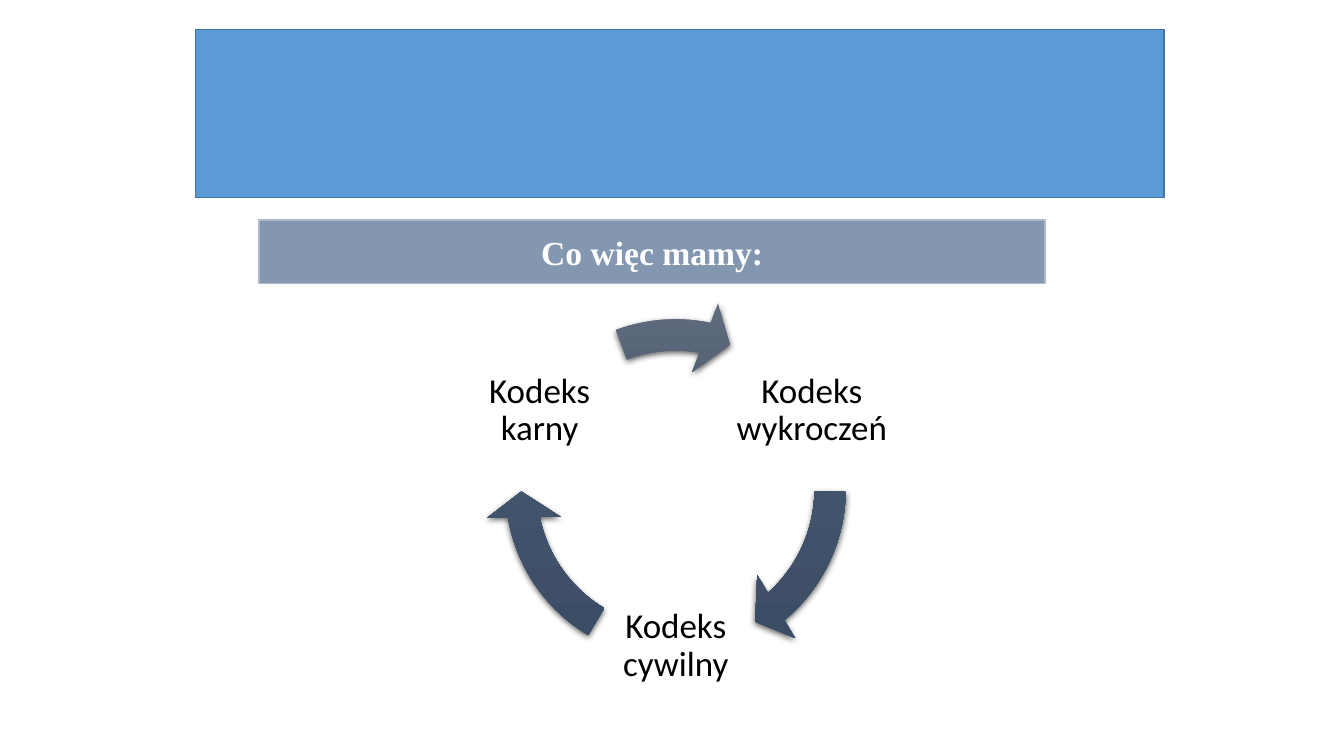
import math

from lxml import etree
from pptx import Presentation
from pptx import util as u
from pptx.dml.color import RGBColor
from pptx.enum import shapes, text
from pptx.oxml import parse_xml
from pptx.oxml.ns import nsdecls, qn

COLOURS = {
    "banner": "5B9BD5",
    "banner_edge": "43739E",
    "heading": "8497B0",
    "heading_edge": "ADB9CA",
    "heading_text": "FFFFFF",
    "label": "000000",
    "arrow_top": "606B7D",
    "arrow_middle": "42546C",
    "arrow_bottom": "394A62",
    "shadow": "000000",
}
CENTRE_X, CENTRE_Y = 17.03, 12.33
LABEL_RADIUS, LABEL_SIDE, ARROW_SIDE = 3.96, 4.06, 9.63
CYCLE = [
    ("Kodeks wykroczeń", -30, 29.652, 0.508),
    ("Kodeks cywilny", 90, 101.734, 72.59),
    ("Kodeks karny", 210, 168.58, 149.662),
]


def colour(name):
    return RGBColor.from_string(COLOURS[name])


def centred_box(x, y, side):
    return [u.Cm(value) for value in (x - side / 2, y - side / 2, side, side)]


def paint(panel, fill, edge):
    panel.fill.solid()
    panel.fill.fore_color.rgb = colour(fill)
    panel.line.color.rgb = colour(edge)
    panel.line.width = u.Pt(1)


def write(frame, words, font, size, ink, bold=False):
    frame.word_wrap = True
    frame.auto_size = text.MSO_AUTO_SIZE.NONE
    frame.vertical_anchor = text.MSO_ANCHOR.MIDDLE
    paragraph = frame.paragraphs[0]
    paragraph.alignment = text.PP_ALIGN.CENTER
    run = paragraph.add_run()
    run.text = words
    run.font.name = font
    run.font.size = u.Pt(size)
    run.font.bold = bold
    run.font.color.rgb = colour(ink)
    return paragraph


def add_banner(slide):
    banner = slide.shapes.add_shape(
        shapes.MSO_SHAPE.RECTANGLE, u.Cm(4.93), u.Cm(0.74), u.Cm(24.41), u.Cm(4.24))
    banner.shadow.inherit = False
    paint(banner, "banner", "banner_edge")


def add_heading(slide, words):
    heading = slide.shapes.title
    heading.left, heading.top = u.Cm(6.53), u.Cm(5.54)
    heading.width, heading.height = u.Cm(19.81), u.Cm(1.6)
    paint(heading, "heading", "heading_edge")
    write(heading.text_frame, words, "Times New Roman", 24, "heading_text", True)


def add_label(cycle, words, degrees):
    angle = math.radians(degrees)
    label = cycle.shapes.add_textbox(*centred_box(
        CENTRE_X + LABEL_RADIUS * math.cos(angle),
        CENTRE_Y + LABEL_RADIUS * math.sin(angle), LABEL_SIDE))
    frame = label.text_frame
    frame.margin_left = frame.margin_right = u.Cm(0.08)
    frame.margin_top = frame.margin_bottom = u.Cm(0.08)
    write(frame, words, "Calibri", 25, "label").line_spacing = 0.9


def shade(arrow):
    arrow.fill.gradient()
    arrow.fill.gradient_angle = 270
    stops = arrow.fill._fill._gradFill.find(qn("a:gsLst"))
    for stop in list(stops):
        stops.remove(stop)
    for position, name in ((0, "arrow_top"), (50000, "arrow_middle"), (100000, "arrow_bottom")):
        stop = etree.SubElement(stops, qn("a:gs"), pos=str(position))
        etree.SubElement(stop, qn("a:srgbClr"), val=COLOURS[name])


def cast_shadow(arrow):
    arrow.shadow.inherit = False
    effects = arrow._element.spPr.find(qn("a:effectLst"))
    effects.append(parse_xml(
        f'<a:outerShdw {nsdecls("a")} blurRad="{u.Pt(4.5)}" dist="{u.Pt(1.5)}" '
        f'dir="5400000" algn="ctr" rotWithShape="0">'
        f'<a:srgbClr val="{COLOURS["shadow"]}"><a:alpha val="63000"/></a:srgbClr>'
        f'</a:outerShdw>'))


def add_arrow(cycle, end, start):
    arrow = cycle.shapes.add_shape(
        shapes.MSO_SHAPE.CIRCULAR_ARROW, *centred_box(CENTRE_X, CENTRE_Y, ARROW_SIDE))
    for index, value in enumerate((0.082, 5.758, end, start, 0.096)):
        arrow.adjustments[index] = value
    arrow.line.fill.background()
    shade(arrow)
    cast_shadow(arrow)


def main():
    deck = Presentation()
    deck.slide_width, deck.slide_height = u.Cm(33.87), u.Cm(19.05)
    slide = deck.slides.add_slide(deck.slide_layouts.get_by_name("Title Only"))
    add_banner(slide)
    add_heading(slide, "Co więc mamy:")
    cycle = slide.shapes.add_group_shape()
    for words, degrees, end, start in CYCLE:
        add_label(cycle, words, degrees)
        add_arrow(cycle, end, start)
    deck.save("out.pptx")


if __name__ == "__main__":
    main()
